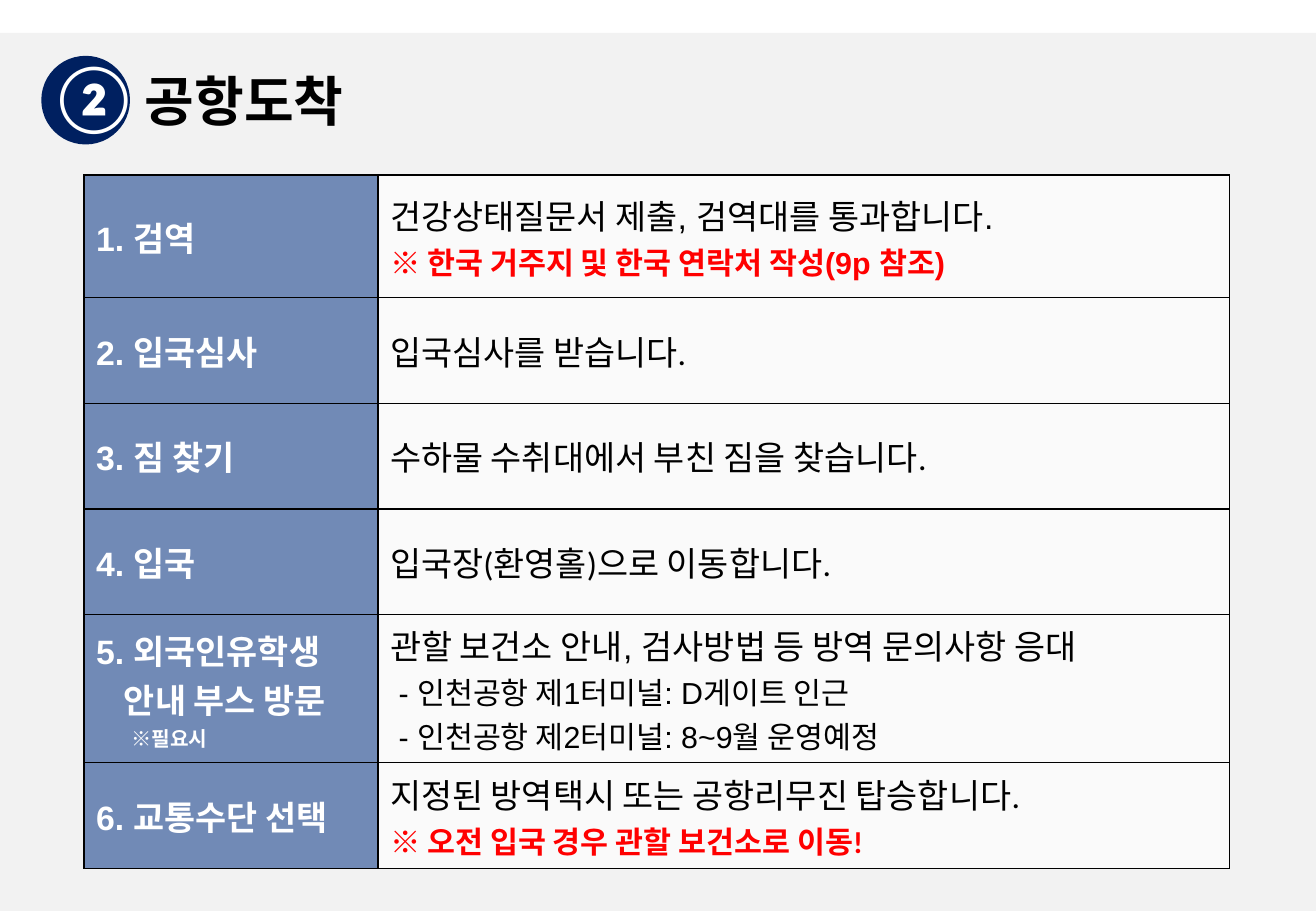
"""Build the airport arrival slide."""
from dataclasses import dataclass

from lxml import etree
from pptx import Presentation
from pptx.dml.color import RGBColor
from pptx.enum import shapes, text
from pptx.oxml import ns
from pptx.util import Inches, Pt


@dataclass(frozen=True)
class Theme:
    """Colours, fonts and type sizes."""
    panel: str = "F2F2F2"
    navy: str = "002060"
    blue: str = "2F5597"
    white: str = "FFFFFF"
    black: str = "000000"
    red: str = "FF0000"
    sans: str = "Arial"
    body: str = "Calibri"
    badge: int = 40
    title: int = 32
    main: int = 20
    note: int = 18
    small: int = 12
    alpha: int = 66


T = Theme()
HEAD = {"size": T.main, "color": T.white, "bold": True}
SMALL = {**HEAD, "size": T.small}
MAIN = {"size": T.main, "color": T.black, "bold": False}
ITEM = {**MAIN, "size": T.note}
NOTE = {"size": T.note, "color": T.red, "bold": True}

COLS = (2.42, 7.01)
ROWS = (
    (1.01, T.sans, [("1. 검역", HEAD, 0)],
     [("건강상태질문서 제출, 검역대를 통과합니다.", MAIN, 0),
      ("※ 한국 거주지 및 한국 연락처 작성(9p 참조)", NOTE, 0)]),
    (0.87, T.body, [("2. 입국심사", HEAD, 0)],
     [("입국심사를 받습니다.", MAIN, 0)]),
    (0.87, T.body, [("3. 짐 찾기", HEAD, 0)],
     [("수하물 수취대에서 부친 짐을 찾습니다.", MAIN, 0)]),
    (0.87, T.body, [("4. 입국", HEAD, 0)],
     [("입국장(환영홀)으로 이동합니다.", MAIN, 0)]),
    (1.22, T.sans,
     [("5. 외국인유학생", HEAD, 0), ("안내 부스 방문", HEAD, 0.23),
      ("※필요시", SMALL, 0.29)],
     [("관할 보건소 안내, 검사방법 등 방역 문의사항 응대", MAIN, 0),
      ("- 인천공항 제1터미널: D게이트 인근", ITEM, 0.07),
      ("- 인천공항 제2터미널: 8~9월 운영예정", ITEM, 0.07)]),
    (0.87, T.body, [("6. 교통수단 선택", HEAD, 0)],
     [("지정된 방역택시 또는 공항리무진 탑승합니다.", MAIN, 0),
      ("※ 오전 입국 경우 관할 보건소로 이동!", NOTE, 0)]),
)


def style(font, name, size, color, bold):
    """Format a font."""
    for key, val in {"name": name, "size": Pt(size), "bold": bold}.items():
        setattr(font, key, val)
    font.color.rgb = RGBColor.from_string(color)


def write(frame, lines, name):
    """Fill a text frame with styled, indented lines."""
    for i, (words, look, left) in enumerate(lines):
        para = frame.add_paragraph() if i else frame.paragraphs[0]
        para.alignment = text.PP_ALIGN.LEFT
        if left:
            para._p.get_or_add_pPr().set("marL", str(Inches(left)))
        run = para.add_run()
        run.text = words
        style(run.font, name, **look)


def place(item, box):
    """Move and size a shape in inches."""
    for key, val in zip(("left", "top", "width", "height"), box):
        setattr(item, key, Inches(val))


def solid(group, kind, box, color):
    """Add a plain filled shape."""
    item = group.add_shape(kind, *map(Inches, box))
    item.shadow.inherit = False
    item.fill.solid()
    item.fill.fore_color.rgb = RGBColor.from_string(color)
    item.line.fill.background()
    return item


def label(frame, words, size, color):
    """Set one bold, unwrapped line."""
    attrs = {"word_wrap": False, "vertical_anchor": text.MSO_ANCHOR.TOP,
             "auto_size": text.MSO_AUTO_SIZE.SHAPE_TO_FIT_TEXT}
    for key, val in attrs.items():
        setattr(frame, key, val)
    look = {"size": size, "color": color, "bold": True}
    write(frame, [(words, look, 0)], T.body)


def badge(slide):
    """Add the numbered disc."""
    group = slide.shapes.add_group_shape().shapes
    solid(group, shapes.MSO_SHAPE.OVAL, (0.34, 0.46, 0.73, 0.73), T.navy)
    box = group.add_textbox(*map(Inches, (0.31, 0.4, 0.76, 0.77)))
    label(box.text_frame, "②", T.badge, T.white)


def paint(cell, color):
    """Give a cell black edges and a translucent fill."""
    props = cell._tc.get_or_add_tcPr()
    for side in "LRTB":
        line = etree.SubElement(props, ns.qn(f"a:ln{side}"), w=str(Pt(1)))
        fill = etree.SubElement(line, ns.qn("a:solidFill"))
        etree.SubElement(fill, ns.qn("a:srgbClr"), val=T.black)
    cell.fill.solid()
    cell.fill.fore_color.rgb = RGBColor.from_string(color)
    tint = props.find(ns.qn("a:solidFill")).find(ns.qn("a:srgbClr"))
    etree.SubElement(tint, ns.qn("a:alpha"), val=str(T.alpha * 1000))


def steps(slide):
    """Add the table of arrival steps."""
    box = (0.69, 1.44, sum(COLS), sum(row[0] for row in ROWS))
    grid = slide.shapes.add_table(
        len(ROWS), len(COLS), *map(Inches, box)).table
    grid.first_row = grid.horz_banding = False
    for col, width in zip(grid.columns, COLS):
        col.width = Inches(width)
    for row, (high, name, head, body) in zip(grid.rows, ROWS):
        row.height = Inches(high)
        parts = ((head, T.sans, T.blue), (body, name, T.white))
        for cell, (lines, font, color) in zip(row.cells, parts):
            paint(cell, color)
            cell.vertical_anchor = text.MSO_ANCHOR.MIDDLE
            write(cell.text_frame, lines, font)


def main():
    """Build and save the slide."""
    deck = Presentation()
    deck.slide_width, deck.slide_height = Inches(10.83), Inches(7.5)
    slide = deck.slides.add_slide(deck.slide_layouts[5])
    panel = solid(slide.shapes, shapes.MSO_SHAPE.RECTANGLE,
                  (0, 0.27, 10.83, 7.23), T.panel)
    slide.shapes._spTree.insert(2, panel._element)
    badge(slide)
    title = slide.shapes.title
    place(title, (1.09, 0.51, 2, 0.64))
    label(title.text_frame, "공항도착", T.title, T.black)
    steps(slide)
    deck.save("out.pptx")


if __name__ == "__main__":
    main()
